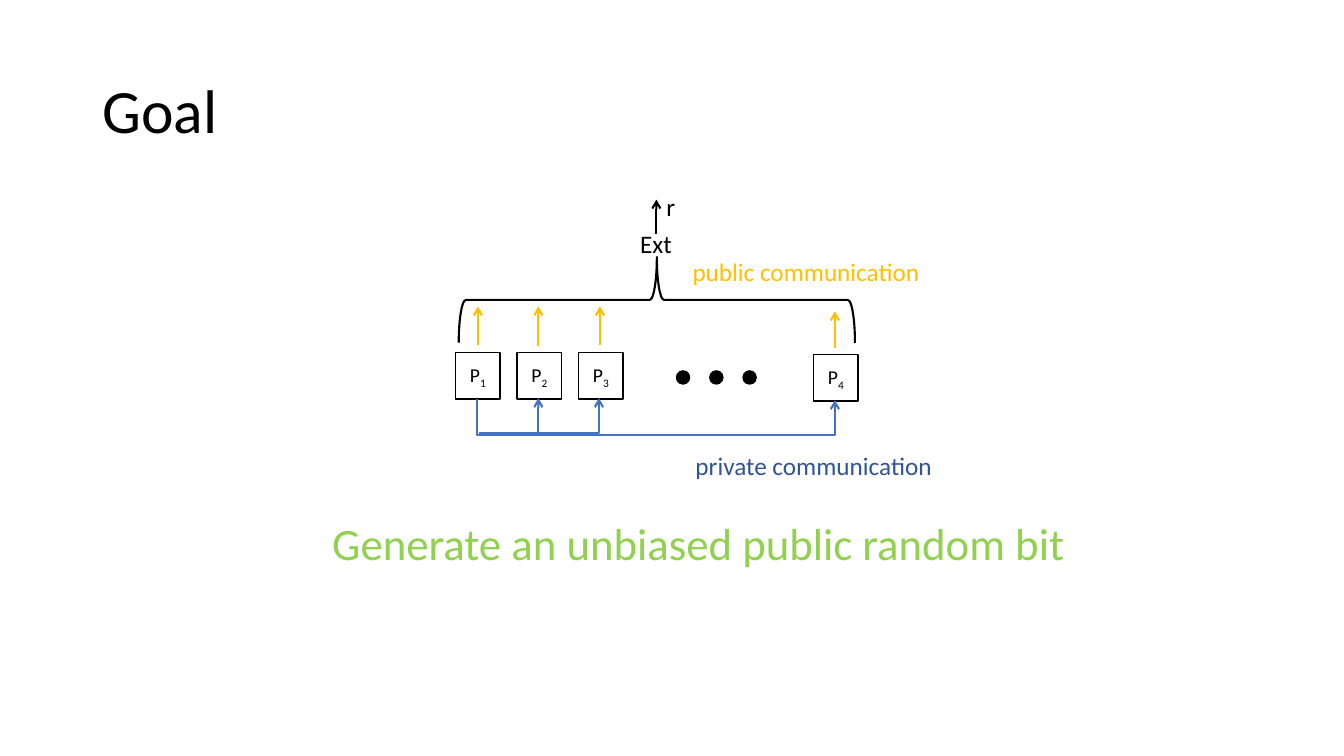
from lxml import etree
from pptx import Presentation
from pptx.dml.color import RGBColor
from pptx.enum.shapes import MSO_CONNECTOR, MSO_SHAPE
from pptx.enum.text import MSO_ANCHOR, MSO_AUTO_SIZE, PP_ALIGN
from pptx.oxml.ns import qn
from pptx.util import Pt

PX = 9144  # EMU per px, 100 px to the inch
BLANK_LAYOUT = 6

STRAIGHT, ELBOW = MSO_CONNECTOR.STRAIGHT, MSO_CONNECTOR.ELBOW
RECTANGLE, OVAL, BRACE = MSO_SHAPE.RECTANGLE, MSO_SHAPE.OVAL, MSO_SHAPE.RIGHT_BRACE
LEFT, CENTER = PP_ALIGN.LEFT, PP_ALIGN.CENTER
TOP, MIDDLE = MSO_ANCHOR.TOP, MSO_ANCHOR.MIDDLE
FIT_SHAPE = MSO_AUTO_SIZE.SHAPE_TO_FIT_TEXT

BLACK = RGBColor(0x00, 0x00, 0x00)
WHITE = RGBColor(0xFF, 0xFF, 0xFF)
GREEN = RGBColor(0x92, 0xD0, 0x50)
GOLD = RGBColor(0xFF, 0xC0, 0x00)
BLUE = RGBColor(0x44, 0x72, 0xC4)
DARK_BLUE = RGBColor(0x2F, 0x55, 0x97)


class Page:
    font_name = "Calibri"

    def __init__(self, deck):
        self.shapes = deck.slides.add_slide(deck.slide_layouts[BLANK_LAYOUT]).shapes

    def style_paragraph(self, para, size, color, align=LEFT):
        para.alignment = align
        para.font.name = self.font_name
        para.font.size = Pt(size)
        para.font.color.rgb = color

    def text(self, words, box, size, color, align=LEFT, anchor=TOP, wrap=True):
        frame = self.shapes.add_textbox(*(n * PX for n in box)).text_frame
        frame.word_wrap = wrap
        frame.vertical_anchor = anchor
        para = frame.paragraphs[0]
        para.text = words
        self.style_paragraph(para, size, color, align)
        return frame

    def label(self, words, box, color=BLACK):
        """Add an 18 pt unwrapped text that sizes its own box."""
        self.text(words, box, 18, color, wrap=False).auto_size = FIT_SHAPE

    def shape(self, kind, box, fill=None, line_width=1):
        shape = self.shapes.add_shape(kind, *(n * PX for n in box))
        shape.shadow.inherit = False
        if fill is None:
            shape.fill.background()
        else:
            shape.fill.solid()
            shape.fill.fore_color.rgb = fill
        shape.line.color.rgb = BLACK
        shape.line.width = Pt(line_width)
        return shape

    def party(self, index, left, top):
        """Add a square holding P with a subscript index."""
        frame = self.shape(RECTANGLE, (left, top, 44, 46), WHITE).text_frame
        frame.vertical_anchor = MIDDLE
        para = frame.paragraphs[0]
        self.style_paragraph(para, 14, BLACK, CENTER)
        para.add_run().text = "P"
        span = para.add_run()
        span.text = str(index)
        span._r.get_or_add_rPr().set("baseline", "-25000")

    def arrow(self, start, end, color, bend=None, rotation=0):
        """Add an arrow; bend places an elbow's middle leg, as a share of its width."""
        kind = STRAIGHT if bend is None else ELBOW
        link = self.shapes.add_connector(kind, *(n * PX for n in start + end))
        link.line.color.rgb = color
        link.line.width = Pt(1.5)
        properties = link._element.spPr
        etree.SubElement(link.line._get_or_add_ln(), qn("a:tailEnd"), type="arrow")
        etree.SubElement(properties, qn("a:effectLst"))
        if rotation:
            properties.find(qn("a:xfrm")).set("rot", str(rotation * 60000))
        if bend is not None:
            geometry = properties.find(qn("a:prstGeom"))
            adjustments = geometry.find(qn("a:avLst"))
            if adjustments is None:
                adjustments = etree.SubElement(geometry, qn("a:avLst"))
            etree.SubElement(adjustments, qn("a:gd"), name="adj1",
                             fmla=f"val {round(bend * 100000)}")


def main():
    deck = Presentation()
    deck.slide_width, deck.slide_height = 1333 * PX, 750 * PX
    page = Page(deck)

    title = page.text("Goal", (92, 40, 1150, 145), 44, BLACK, anchor=MIDDLE)
    title.paragraphs[0].line_spacing = 0.9
    page.text("Generate an unbiased public random bit", (247, 507, 892, 64), 32, GREEN, CENTER)

    parties = [(452 + 61 * step, 350) for step in range(3)] + [(807, 352)]
    for index, (left, top) in enumerate(parties, start=1):
        page.party(index, left, top)
    for x, bottom, tip in ((474, 342, 304), (534, 343, 304), (595, 342, 304), (828, 345, 309)):
        page.arrow((x, bottom), (x, tip), GOLD)

    # Private links run from P1 to each of the other parties
    page.arrow((475, 430), (594, 395), BLUE, bend=1)
    page.arrow((534, 430), (534, 395), BLUE)
    page.arrow((651, 219), (650, 574), BLUE, bend=36, rotation=270)

    page.label("private communication", (680, 442, 257, 40), DARK_BLUE)
    page.label("public communication", (677, 249, 248, 40), GOLD)

    page.shape(BRACE, (609, 101, 85, 393), line_width=1.5).rotation = 270
    page.label("Ext", (625, 222, 52, 40))
    page.arrow((651, 232), (651, 198), BLACK)
    page.label("r", (651, 185, 29, 40))

    for step in range(3):
        page.shape(OVAL, (671 + 33 * step, 368, 13, 13), BLACK)

    deck.save("out.pptx")


if __name__ == "__main__":
    main()
